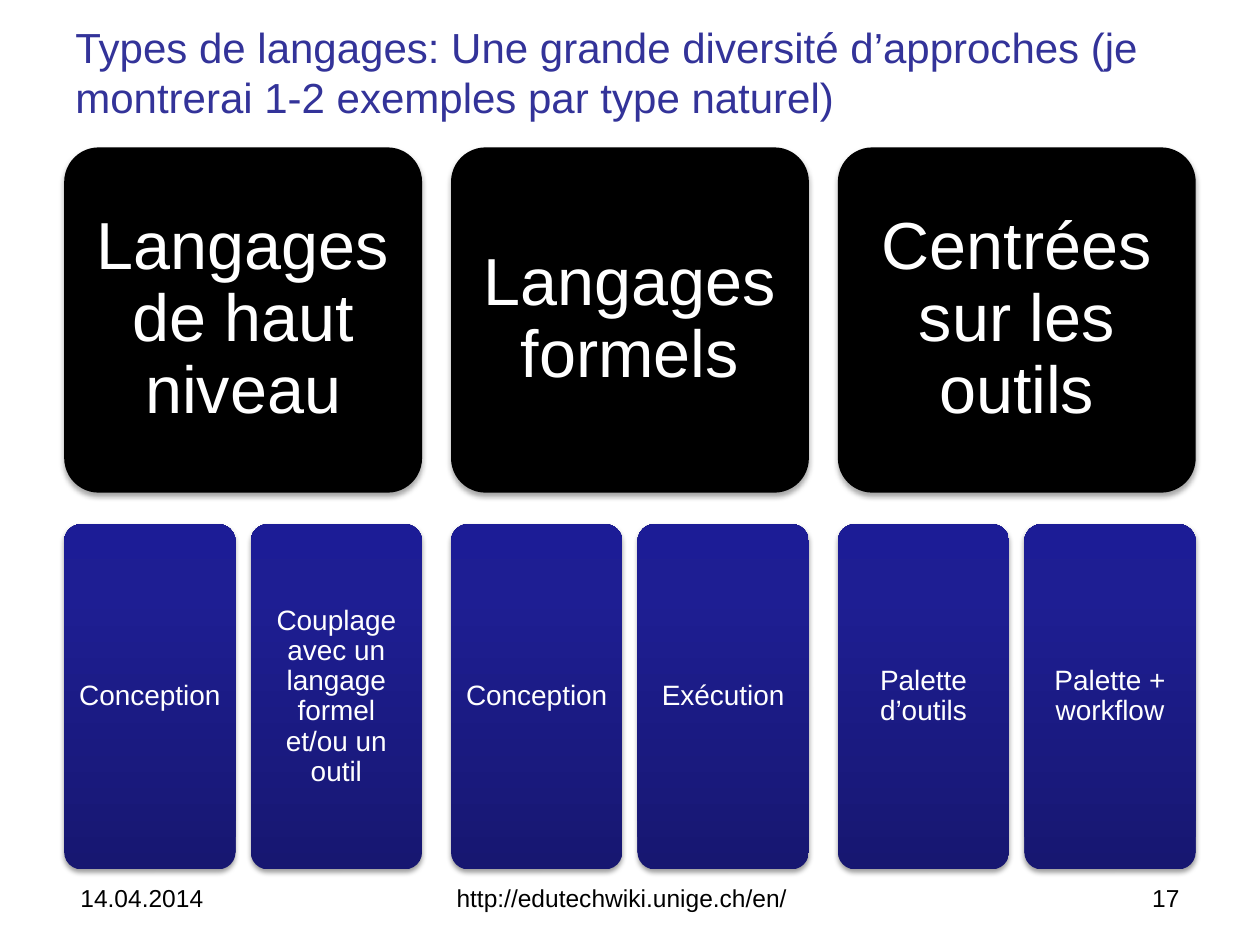
from lxml import etree
from pptx import Presentation
from pptx.dml.color import RGBColor
from pptx.enum import shapes, text
from pptx.oxml import parse_xml
from pptx.oxml.ns import nsdecls, qn
from pptx.util import Inches, Pt

ALIGN = text.PP_ALIGN
GROUPS = [
    ("Langages de haut niveau",
     ["Conception", "Couplage avec un langage formel et/ou un outil"]),
    ("Langages formels", ["Conception", "Exécution"]),
    ("Centrées sur les outils", ["Palette d’outils", "Palette + workflow"]),
]
BLUES = [(0, "171771"), (80, "1E1E93"), (100, "1C1C96")]


def color(code):
    return RGBColor.from_string(code)


def write(shape, words, size, code, align, space=None, inset=None,
          anchor=text.MSO_ANCHOR.MIDDLE):
    frame = shape.text_frame
    frame.word_wrap = True
    frame.vertical_anchor = anchor
    if inset is not None:
        frame.margin_left = frame.margin_right = Inches(inset)
        frame.margin_top = frame.margin_bottom = Inches(inset)
    para = frame.paragraphs[0]
    para.alignment = align
    if space:
        para.line_spacing = space
    run = para.add_run()
    run.text = words
    run.font.size = Pt(size)
    run.font.name = "Arial"
    run.font.color.rgb = color(code)


def label(slide, box, words, size, code, align, **opts):
    shape = slide.shapes.add_textbox(*map(Inches, box))
    write(shape, words, size, code, align, **opts)


def shade(shape, stops):
    """Fill from bottom to top with the given colour stops."""
    items = "".join(
        f'<a:gs pos="{pos * 1000}"><a:srgbClr val="{code}"/></a:gs>'
        for pos, code in stops)
    fill = parse_xml(
        f'<a:gradFill {nsdecls("a")} rotWithShape="1"><a:gsLst>{items}</a:gsLst>'
        '<a:lin ang="16200000" scaled="0"/></a:gradFill>')
    shape._element.spPr.find(qn("a:prstGeom")).addnext(fill)


def drop(shape, dist, alpha):
    """Soft black shadow straight below the shape."""
    shape.shadow.inherit = False
    effects = shape._element.spPr.find(qn("a:effectLst"))
    outer = etree.SubElement(
        effects, qn("a:outerShdw"), blurRad=str(Pt(3.1)), dist=str(Pt(dist)),
        dir="5400000", rotWithShape="0")
    tint = etree.SubElement(outer, qn("a:srgbClr"), val="000000")
    etree.SubElement(tint, qn("a:alpha"), val=str(alpha * 1000))


def card(slide, box, words, size, inset, dist, alpha, stops=None):
    shape = slide.shapes.add_shape(
        shapes.MSO_SHAPE.ROUNDED_RECTANGLE, *map(Inches, box))
    shape.adjustments[0] = 0.1
    shape.line.fill.background()
    if stops:
        shade(shape, stops)
    else:
        shape.fill.solid()
        shape.fill.fore_color.rgb = color("000000")
    drop(shape, dist, alpha)
    write(shape, words, size, "FFFFFF", ALIGN.CENTER, space=0.9, inset=inset)


def group(slide, box, head, kids):
    """One black card over a row of blue cards."""
    left, top, width, height = box
    tall, small = 2.74, 1.36
    card(slide, (left, top, width, tall), head, 38, 0.16, 1.8, 35)
    step = (width - small) / (len(kids) - 1)
    for i, kid in enumerate(kids):
        spot = (left + i * step, top + height - tall, small, tall)
        card(slide, spot, kid, 16, 0.07, 1.6, 38, BLUES)


def chart(slide, box):
    left, top, width, height = box
    wide = 2.84
    step = (width - wide) / (len(GROUPS) - 1)
    for i, (head, kids) in enumerate(GROUPS):
        group(slide, (left + i * step, top, wide, height), head, kids)


def footer(slide, top):
    parts = [
        (0.54, 2.33, "14.04.2014", ALIGN.LEFT),
        (3.35, 3.17, "http://edutechwiki.unige.ch/en/", ALIGN.CENTER),
        (7.13, 2.33, "17", ALIGN.RIGHT),
    ]
    for left, width, words, align in parts:
        label(slide, (left, top, width, 0.31), words, 14, "000000", align,
              space=0.93, anchor=text.MSO_ANCHOR.TOP)


def main():
    deck = Presentation()
    deck.slide_width, deck.slide_height = Inches(10), Inches(7.5)
    slide = deck.slides.add_slide(deck.slide_layouts[6])
    # Title
    label(slide, (0.5, 0.3, 9, 0.54),
          "Types de langages: Une grande diversité d’approches "
          "(je montrerai 1-2 exemples par type naturel)",
          24, "333399", ALIGN.LEFT)
    # Language families
    chart(slide, (0.51, 1.17, 8.98, 5.73))
    # Date, address and page number
    footer(slide, 6.98)
    deck.save("out.pptx")


if __name__ == "__main__":
    main()
